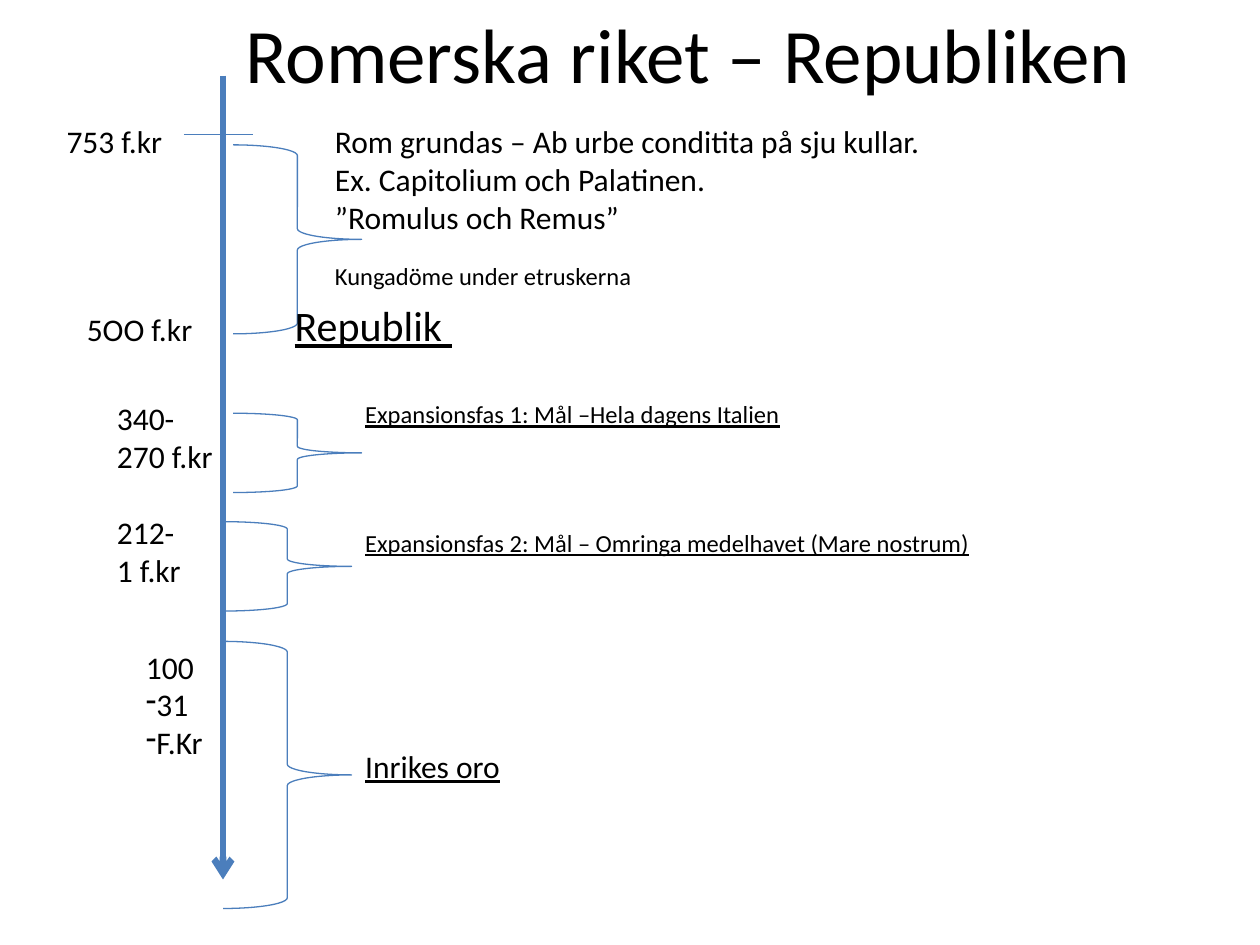
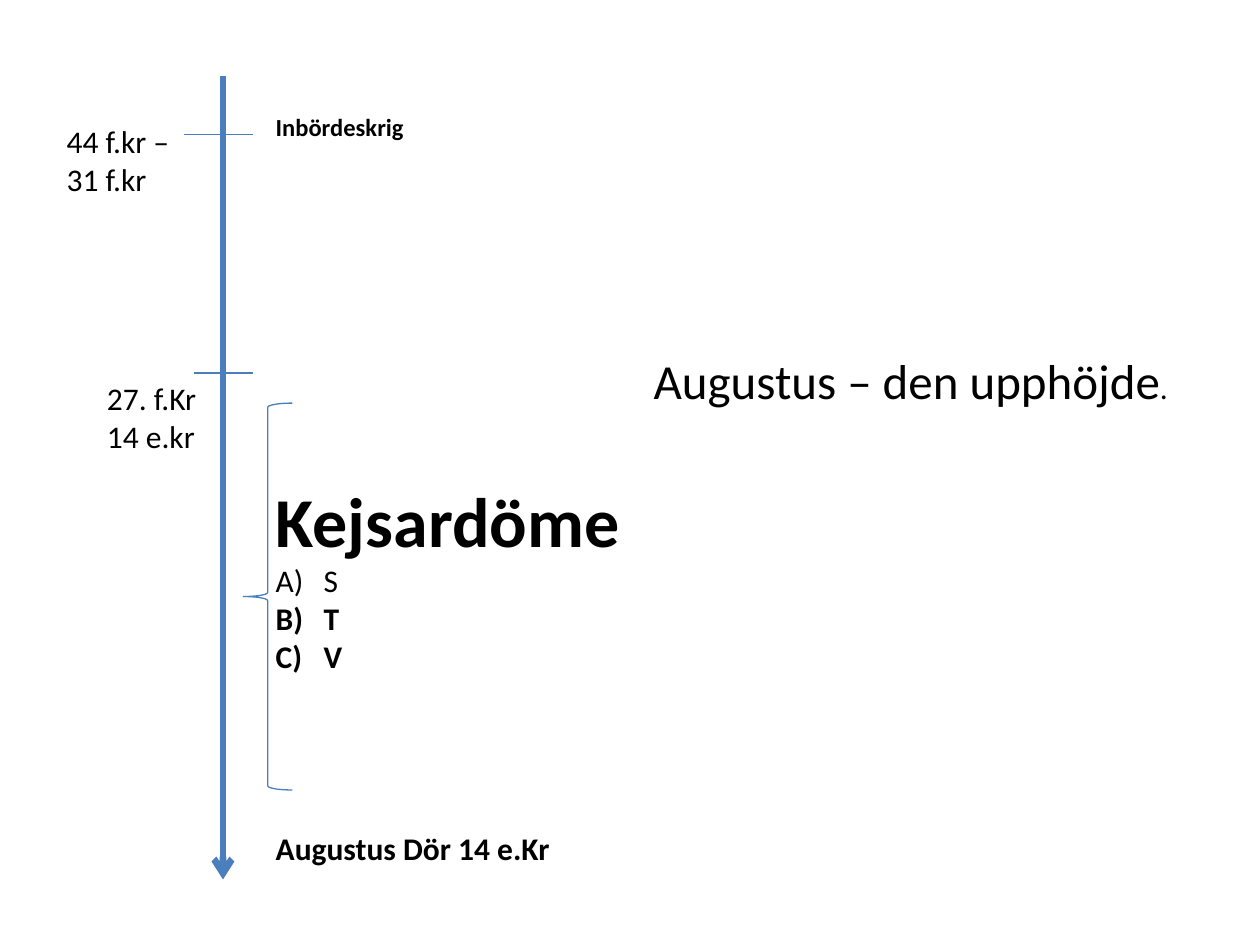
from dataclasses import dataclass

from lxml import etree
from pptx import Presentation
from pptx import util as u
from pptx.dml.color import RGBColor
from pptx.enum import shapes, text
from pptx.oxml.ns import qn

BLUE = "4B7EBC"
BLACK = "000000"
FONT = "Calibri"
AXIS = 1.77
LEFT, RIGHT = shapes.MSO_SHAPE.LEFT_BRACE, shapes.MSO_SHAPE.RIGHT_BRACE


@dataclass(frozen=True)
class Run:
    """A stretch of text in one style."""
    words: str
    size: float = 18
    bold: bool = False
    under: bool = False


@dataclass(frozen=True)
class Para:
    """A paragraph with its gap, indents and bullet."""
    runs: tuple[Run, ...]
    gap: float = 0
    left: float = 0
    hang: float = 0
    mark: str = ""


@dataclass(frozen=True)
class Box:
    """A text box."""
    x: float
    y: float
    wide: float
    high: float
    paras: tuple[Para, ...]
    wrap: bool = False


@dataclass(frozen=True)
class Brace:
    """A brace that spans a period."""
    x: float
    y: float
    wide: float
    high: float
    kind: shapes.MSO_SHAPE = RIGHT


@dataclass(frozen=True)
class Tick:
    """A mark across the time axis."""
    x: float
    y: float


def tint(code: str) -> RGBColor:
    """Turn a hex string into a colour."""
    return RGBColor.from_string(code)


def para(words: str, size: float = 18, bold: bool = False, under: bool = False,
         **more) -> Para:
    """Make a paragraph of one run."""
    return Para((Run(words, size, bold, under),), **more)


def plain(*lines: str) -> tuple[Para, ...]:
    """Make body paragraphs from lines."""
    return tuple(para(line) for line in lines)


def add_line(slide, x1: float, y1: float, x2: float, y2: float,
             width: float = 0.75, arrow: bool = False) -> None:
    """Draw a straight line, with an arrowhead if asked."""
    line = slide.shapes.add_connector(
        shapes.MSO_CONNECTOR.STRAIGHT, *map(u.Inches, (x1, y1, x2, y2)))
    line.line.color.rgb = tint(BLUE)
    line.line.width = u.Pt(width)
    if arrow:
        etree.SubElement(line.line._get_or_add_ln(), qn("a:tailEnd"), type="arrow")
    etree.SubElement(line._element.spPr, qn("a:effectLst"))


def add_brace(slide, brace: Brace) -> None:
    """Draw a brace outline."""
    shape = slide.shapes.add_shape(
        brace.kind, *map(u.Inches, (brace.x, brace.y, brace.wide, brace.high)))
    shape.shadow.inherit = False
    shape.fill.background()
    shape.line.color.rgb = tint(BLUE)
    shape.line.width = u.Pt(0.75)


def fill_para(target, para: Para) -> None:
    """Set indents, bullet and runs of a paragraph."""
    target.alignment = text.PP_ALIGN.LEFT
    if para.gap:
        target.space_before = u.Pt(para.gap)
    props = target._p.get_or_add_pPr()
    props.set("marL", str(u.Inches(para.left)))
    props.set("indent", str(u.Inches(para.hang)))
    if para.mark == "A)":
        etree.SubElement(props, qn("a:buAutoNum"), type="alphaUcParenR")
    elif para.mark:
        etree.SubElement(props, qn("a:buChar"), char=para.mark)
    for item in para.runs:
        run = target.add_run()
        run.text = item.words
        font = run.font
        font.name, font.size = FONT, u.Pt(item.size)
        font.bold, font.underline = item.bold, item.under
        font.color.rgb = tint(BLACK)


def add_box(slide, box: Box) -> None:
    """Draw a text box with its paragraphs."""
    frame = slide.shapes.add_textbox(
        *map(u.Inches, (box.x, box.y, box.wide, box.high))).text_frame
    frame.word_wrap = box.wrap
    for index, para in enumerate(box.paras):
        fill_para(frame.add_paragraph() if index else frame.paragraphs[0], para)


def add_page(deck, items: tuple[Box | Brace | Tick, ...]) -> None:
    """Add a slide with the time axis and its items."""
    slide = deck.slides.add_slide(deck.slide_layouts[6])
    add_line(slide, AXIS, 0.6, AXIS, 6.98, 3.75, True)
    for item in items:
        if isinstance(item, Tick):
            add_line(slide, item.x, item.y, 2.01, item.y)
        elif isinstance(item, Brace):
            add_brace(slide, item)
        else:
            add_box(slide, item)


START = Tick(1.46, 1.07)
HANG = {"left": 0.38, "hang": -0.38}

REPUBLIC = (
    START,
    Box(0.43, 0.92, 0.97, 0.4, plain("753 f.kr")),
    Box(2.56, 0.92, 4.9, 1.01, plain(
        "Rom grundas – Ab urbe conditita på sju kullar.",
        "Ex. Capitolium och Palatinen.", "”Romulus och Remus”")),
    Box(0.59, 2.41, 1.05, 0.4, plain("5OO f.kr")),
    Brace(1.85, 1.15, 1.02, 1.5),
    Box(2.56, 2.02, 2.58, 0.34, (para("Kungadöme under etruskerna", 14),)),
    Box(2.24, 2.33, 5.67, 0.5, (para("Republik ", 24, under=True),), True),
    Brace(1.85, 3.28, 1.02, 0.63),
    Box(0.83, 3.12, 0.97, 1.62, (
        *plain("340-", "270 f.kr"), para("212-", gap=22), para("1 f.kr"))),
    Box(2.8, 3.12, 3.53, 1.25, (
        para("Expansionsfas 1: Mål –Hela dagens Italien", 14, under=True),)),
    Brace(1.77, 4.14, 1.02, 0.71),
    Box(2.8, 4.14, 5.14, 0.34, (para(
        "Expansionsfas 2: Mål – Omringa medelhavet (Mare nostrum)", 14, under=True),)),
    Brace(1.77, 5.09, 1.02, 2.12),
    Box(1.06, 5.09, 0.65, 1.01, (
        para("100"), para("31", mark="-"), para("F.Kr", mark="-"))),
    Box(2.8, 5.88, 1.28, 1.62, (para("Inrikes oro", under=True),)),
    Box(1.85, 0, 7.44, 0.84, (para("Romerska riket – Republiken", 44),)),
)

EMPIRE = (
    START,
    Box(0.43, 0.92, 1.08, 1.31, plain("44 f.kr –", "31 f.kr")),
    Box(2.09, 0.84, 1.23, 0.94, (para("Inbördeskrig", 14, True),)),
    Tick(1.54, 2.96),
    Box(0.75, 2.96, 0.92, 0.71, plain("27. f.Kr", "14 e.kr")),
    Box(2.09, 2.73, 7.64, 4.81, (
        Para((Run("Augustus – den upphöjde", 28), Run(".")), left=3),
        para("Kejsardöme", 40, True, gap=39),
        *(para(name, bold=name != "S", mark="A)", **HANG) for name in "STV"),
        para("Augustus Dör 14 e.Kr", bold=True, gap=88, **HANG)), True),
    Brace(1.93, 3.2, 0.39, 3.07, LEFT),
)


def main() -> None:
    """Build and save the slides."""
    deck = Presentation()
    deck.slide_width, deck.slide_height = u.Inches(10), u.Inches(7.5)
    for items in (REPUBLIC, EMPIRE):
        add_page(deck, items)
    deck.save("out.pptx")


if __name__ == "__main__":
    main()
